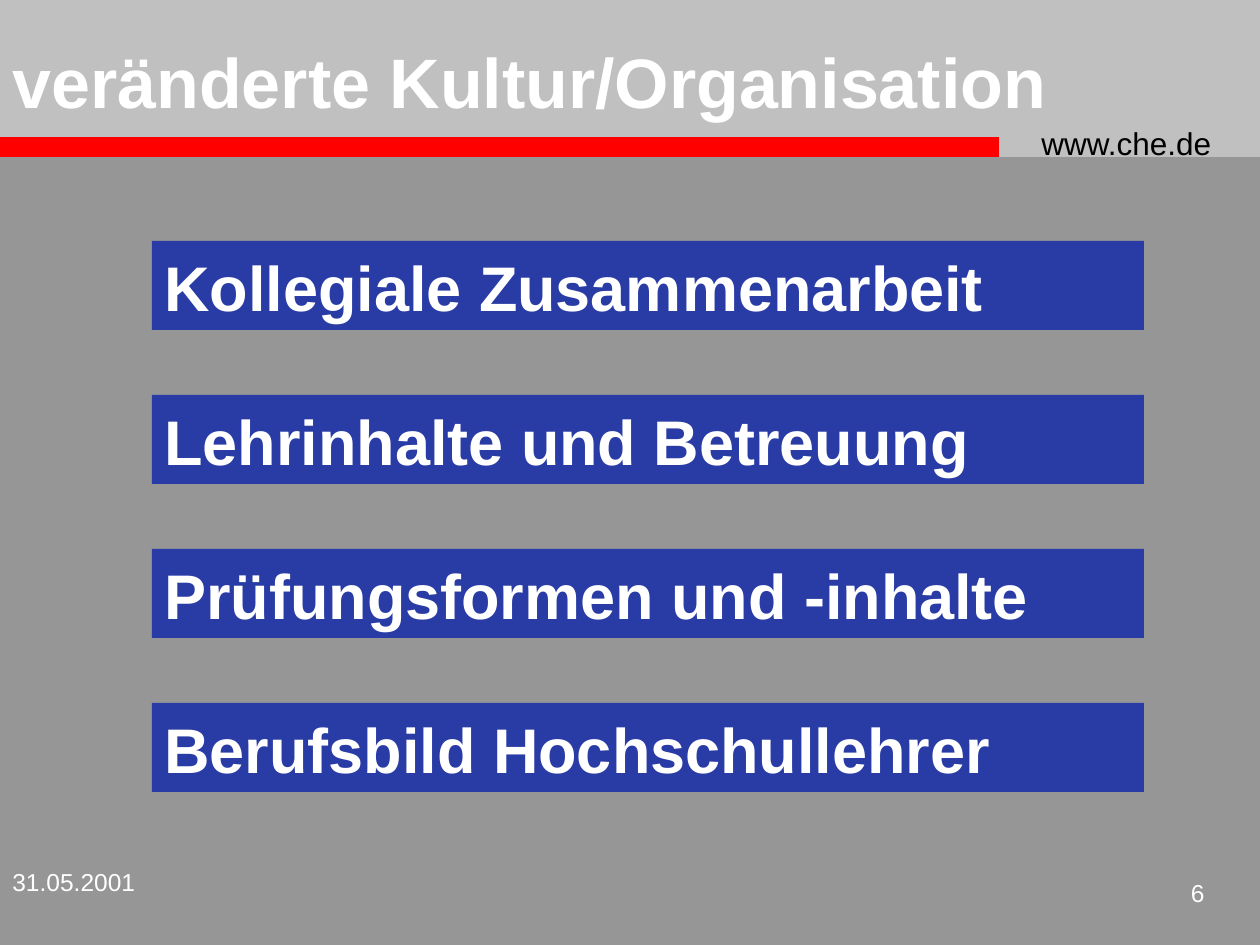
from dataclasses import dataclass

import pptx
import pptx.dml.color
import pptx.enum.shapes
import pptx.enum.text
import pptx.util

PX_PER_INCH = 126
ANCHOR = pptx.enum.text.MSO_ANCHOR
ALIGN = pptx.enum.text.PP_ALIGN


@dataclass(frozen=True)
class Theme:
    font: str = "Arial"
    background: str = "969696"
    header: str = "C0C0C0"
    accent: str = "FF0000"
    bar: str = "293BA5"
    light: str = "FFFFFF"
    dark: str = "000000"
    title_size: int = 40
    bar_size: int = 36
    address_size: int = 18
    footer_size: int = 14


@dataclass(frozen=True)
class Box:
    left: int
    top: int
    width: int
    height: int


@dataclass(frozen=True)
class TextStyle:
    size: int
    color: str
    bold: bool = False
    align: ALIGN = ALIGN.LEFT
    anchor: ANCHOR = ANCHOR.TOP
    wrap: bool = True


THEME = Theme()
TITLE_STYLE = TextStyle(THEME.title_size, THEME.light, bold=True, anchor=ANCHOR.BOTTOM)
BAR_STYLE = TextStyle(THEME.bar_size, THEME.light, bold=True, anchor=ANCHOR.BOTTOM, wrap=False)
ADDRESS_STYLE = TextStyle(THEME.address_size, THEME.dark, anchor=ANCHOR.BOTTOM)
DATE_STYLE = TextStyle(THEME.footer_size, THEME.light)
NUMBER_STYLE = TextStyle(THEME.footer_size, THEME.light, align=ALIGN.RIGHT)

HEADER_BOX = Box(0, 0, 1260, 157)
ACCENT_BOX = Box(0, 137, 999, 20)
TITLE_BOX = Box(0, 32, 1071, 97)
ADDRESS_BOX = Box(1029, 118, 221, 50)
DATE_BOX = Box(0, 861, 262, 63)
NUMBER_BOX = Box(1144, 872, 73, 53)
FIRST_BAR = Box(152, 241, 992, 89)
BAR_PITCH = 154
TOPICS = (
    "Kollegiale Zusammenarbeit",
    "Lehrinhalte und Betreuung",
    "Prüfungsformen und -inhalte",
    "Berufsbild Hochschullehrer",
)


def px(length: int) -> int:
    return round(length * pptx.util.Inches(1) / PX_PER_INCH)


def edges(box: Box) -> tuple[int, int, int, int]:
    return px(box.left), px(box.top), px(box.width), px(box.height)


def rgb(color: str) -> pptx.dml.color.RGBColor:
    return pptx.dml.color.RGBColor.from_string(color)


def write(shape, text: str, style: TextStyle) -> None:
    frame = shape.text_frame
    frame.text = text
    frame.auto_size = pptx.enum.text.MSO_AUTO_SIZE.NONE
    frame.word_wrap = style.wrap
    frame.vertical_anchor = style.anchor
    paragraph = frame.paragraphs[0]
    paragraph.alignment = style.align
    paragraph.font.name = THEME.font
    paragraph.font.size = pptx.util.Pt(style.size)
    paragraph.font.bold = style.bold
    paragraph.font.color.rgb = rgb(style.color)


def add_rectangle(slide, box: Box, color: str):
    shape = slide.shapes.add_shape(pptx.enum.shapes.MSO_SHAPE.RECTANGLE, *edges(box))
    shape.shadow.inherit = False
    shape.fill.solid()
    shape.fill.fore_color.rgb = rgb(color)
    shape.line.fill.background()
    return shape


def add_label(slide, box: Box, text: str, style: TextStyle) -> None:
    write(slide.shapes.add_textbox(*edges(box)), text, style)


def place_title(slide, text: str) -> None:
    """Fill the title placeholder and bring it in front of the header band."""
    title = slide.shapes.title
    title.left, title.top, title.width, title.height = edges(TITLE_BOX)
    write(title, text, TITLE_STYLE)
    title.element.getparent().append(title.element)


def add_topic_bars(slide) -> None:
    for index, topic in enumerate(TOPICS):
        top = FIRST_BAR.top + index * BAR_PITCH
        box = Box(FIRST_BAR.left, top, FIRST_BAR.width, FIRST_BAR.height)
        write(add_rectangle(slide, box, THEME.bar), topic, BAR_STYLE)


def main() -> None:
    presentation = pptx.Presentation()
    presentation.slide_width = px(1260)
    presentation.slide_height = px(945)
    slide = presentation.slides.add_slide(presentation.slide_layouts.get_by_name("Title Only"))
    slide.background.fill.solid()
    slide.background.fill.fore_color.rgb = rgb(THEME.background)

    add_rectangle(slide, HEADER_BOX, THEME.header)
    add_rectangle(slide, ACCENT_BOX, THEME.accent)
    add_label(slide, ADDRESS_BOX, "www.che.de", ADDRESS_STYLE)
    add_label(slide, DATE_BOX, "31.05.2001", DATE_STYLE)
    add_label(slide, NUMBER_BOX, "6", NUMBER_STYLE)
    place_title(slide, "veränderte Kultur/Organisation")
    add_topic_bars(slide)
    presentation.save("out.pptx")


if __name__ == "__main__":
    main()
